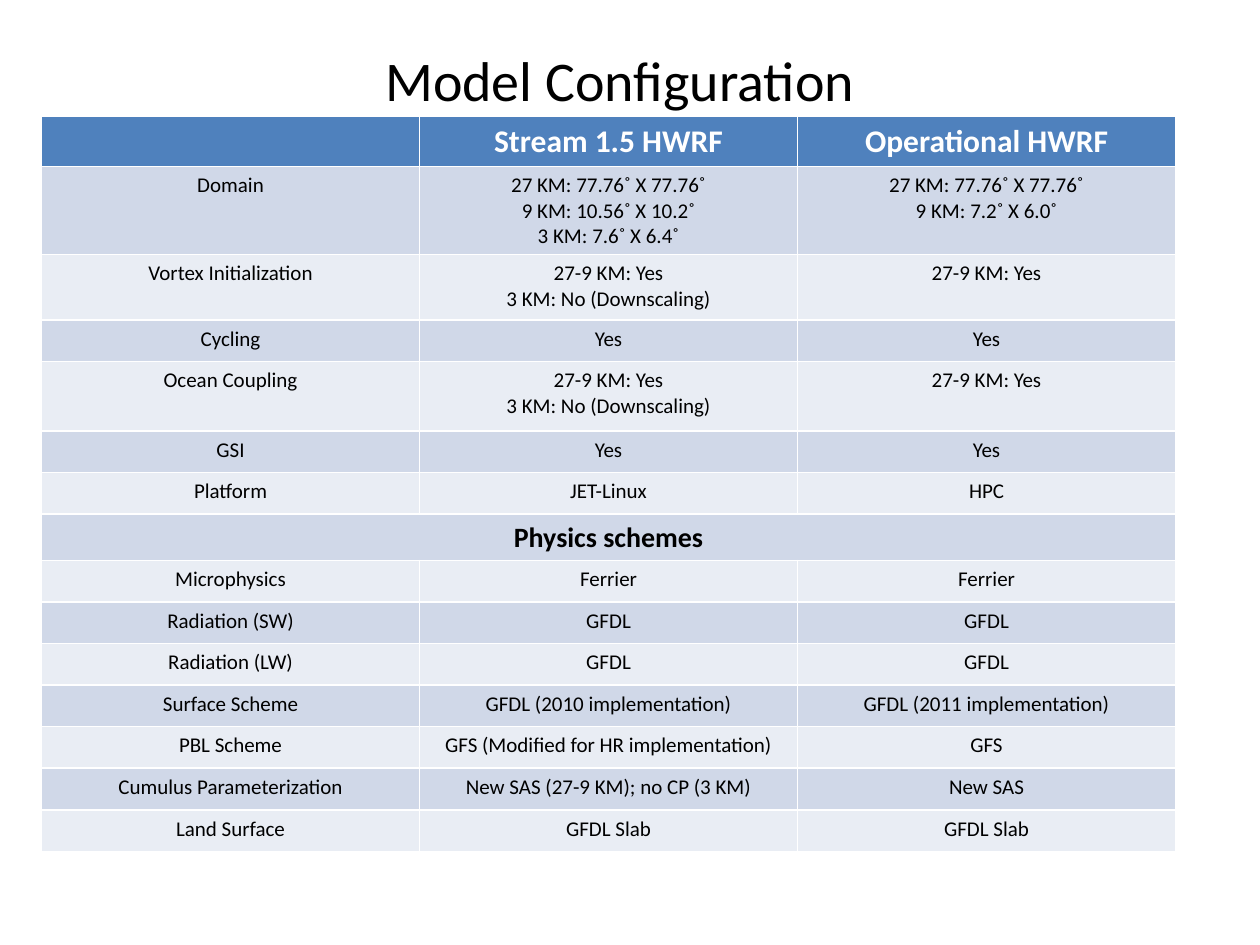
from pptx import Presentation
from pptx.dml.color import RGBColor
from pptx.enum.text import MSO_ANCHOR, PP_ALIGN
from pptx.util import Inches, Pt

CENTER = PP_ALIGN.CENTER
MIDDLE = MSO_ANCHOR.MIDDLE
FONT = "Calibri"
SLIDE_WIDTH, SLIDE_HEIGHT = Inches(10), Inches(7.5)
COLORS = {
    "header": "4F81BD",
    "odd": "D0D8E8",
    "even": "E9EDF4",
    "text": "000000",
    "header_text": "FFFFFF",
}
COLUMN_SHARE = 0.3
ROW_HEIGHT = 0.33
TALL_ROWS = {"Domain": 0.68, "Vortex Initialization": 0.52, "Ocean Coupling": 0.55}
SECTION = "Physics schemes"
NESTED_YES = "27-9 KM: Yes"
DOWNSCALED = NESTED_YES + "\n3 KM: No (Downscaling)"
CONFIGURATION = [
    ("", "Stream 1.5 HWRF", "Operational HWRF"),
    ("Domain",
     "27 KM: 77.76˚ X 77.76˚\n9 KM: 10.56˚ X 10.2˚\n3 KM: 7.6˚ X 6.4˚",
     "27 KM: 77.76˚ X 77.76˚\n9 KM: 7.2˚ X 6.0˚"),
    ("Vortex Initialization", DOWNSCALED, NESTED_YES),
    ("Cycling", "Yes", "Yes"),
    ("Ocean Coupling", DOWNSCALED, NESTED_YES),
    ("GSI", "Yes", "Yes"),
    ("Platform", "JET-Linux", "HPC"),
    (SECTION, "", ""),
    ("Microphysics", "Ferrier", "Ferrier"),
    ("Radiation (SW)", "GFDL", "GFDL"),
    ("Radiation (LW)", "GFDL", "GFDL"),
    ("Surface Scheme", "GFDL (2010 implementation)", "GFDL (2011 implementation)"),
    ("PBL Scheme", "GFS (Modified for HR implementation)", "GFS"),
    ("Cumulus Parameterization", "New SAS (27-9 KM); no CP (3 KM)", "New SAS"),
    ("Land Surface", "GFDL Slab", "GFDL Slab"),
]


def write_text(frame, text, size, color, bold=False):
    """Fill a text frame with centred paragraphs, one per line of text."""
    frame.text = text
    for paragraph in frame.paragraphs:
        paragraph.alignment = CENTER
        font = paragraph.font
        font.name, font.size, font.bold = FONT, Pt(size), bold
        font.color.rgb = RGBColor.from_string(COLORS[color])


def add_title(slide, text):
    """Add the slide title in a band across the top."""
    title = slide.shapes.add_textbox(
        Inches(0.42), 0, int(SLIDE_WIDTH * 0.9), SLIDE_HEIGHT // 6)
    frame = title.text_frame
    frame.word_wrap = True
    frame.vertical_anchor = MIDDLE
    write_text(frame, text, 32, "text")


def row_style(index, label):
    """Return the fill, text size, text colour and weight of a table row."""
    if index == 0:
        return "header", 18, "header_text", True
    band = "odd" if index % 2 else "even"
    if label == SECTION:
        return band, 16, "text", True
    return band, 12, "text", False


def add_configuration_table(slide, rows):
    """Add the comparison table with banded rows and a merged section row."""
    heights = [Inches(TALL_ROWS.get(row[0], ROW_HEIGHT)) for row in rows]
    column_width = int(SLIDE_WIDTH * COLUMN_SHARE)
    column_count = len(rows[0])
    table = slide.shapes.add_table(
        len(rows), column_count, Inches(0.33), Inches(0.92),
        column_width * column_count, sum(heights)).table
    for index, (labels, height) in enumerate(zip(rows, heights)):
        table.rows[index].height = height
        fill, size, color, bold = row_style(index, labels[0])
        for column, text in enumerate(labels):
            cell = table.cell(index, column)
            cell.fill.solid()
            cell.fill.fore_color.rgb = RGBColor.from_string(COLORS[fill])
            write_text(cell.text_frame, text, size, color, bold)
        if labels[0] == SECTION:
            table.cell(index, 0).merge(table.cell(index, column_count - 1))


def main():
    """Build and save the model configuration slide."""
    presentation = Presentation()
    presentation.slide_width, presentation.slide_height = SLIDE_WIDTH, SLIDE_HEIGHT
    slide = presentation.slides.add_slide(presentation.slide_layouts[6])
    add_title(slide, "Model Configuration")
    add_configuration_table(slide, CONFIGURATION)
    presentation.save("out.pptx")


if __name__ == "__main__":
    main()
